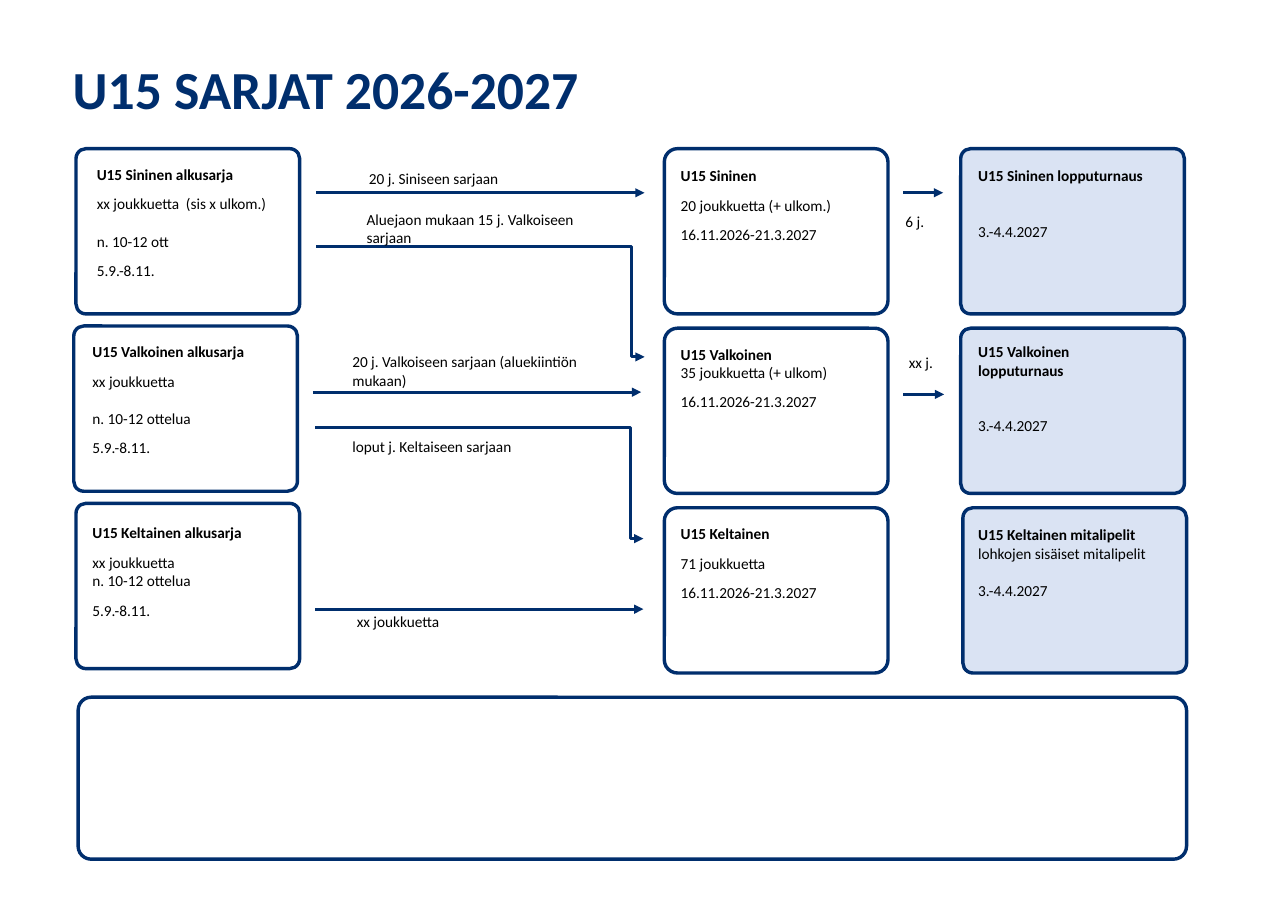
from lxml.etree import SubElement
from pptx import Presentation
from pptx.dml.color import RGBColor
from pptx.enum.shapes import MSO_CONNECTOR as Connector, MSO_SHAPE as Shape
from pptx.enum.text import MSO_ANCHOR as Anchor, MSO_AUTO_SIZE as AutoSize, PP_ALIGN as Align
from pptx.oxml.ns import qn
from pptx.util import Inches, Pt

COLORS = {"navy": "002E6D", "pale": "DAE3F3", "text": "000000"}
TITLE_FONT = {"name": "Calibri", "size": Pt(35), "bold": True}
HEADING_FONT = {"name": "Calibri", "size": Pt(10), "bold": True}
BODY_FONT = {"name": "Calibri", "size": Pt(10), "bold": False}
FRAME_FORMAT = {"word_wrap": True, "auto_size": AutoSize.NONE, "vertical_anchor": Anchor.TOP,
                "margin_left": Inches(0.1), "margin_right": Inches(0.1),
                "margin_top": Inches(0.05), "margin_bottom": Inches(0.05)}
SMALL_GAP, LINE_GAP, DOUBLE_GAP = 7.3, 12.2, 24.4


def write_text(shape, lines, fonts, color):
    frame = shape.text_frame
    for name, value in FRAME_FORMAT.items():
        setattr(frame, name, value)
    for index, (gap, text) in enumerate(lines):
        paragraph = frame.add_paragraph() if index else frame.paragraphs[0]
        paragraph.text = text
        paragraph.alignment = Align.LEFT
        paragraph.line_spacing = 1.0
        paragraph.space_before = Pt(gap)
        for name, value in fonts[min(index, len(fonts) - 1)].items():
            setattr(paragraph.font, name, value)
        paragraph.font.color.rgb = RGBColor.from_string(COLORS[color])


def add_box(left, top, width, height, radius, fill=None):
    shape = slide.shapes.add_shape(
        Shape.ROUNDED_RECTANGLE, Inches(left), Inches(top), Inches(width), Inches(height))
    shape.adjustments[0] = radius
    shape.shadow.inherit = False
    shape.line.color.rgb = RGBColor.from_string(COLORS["navy"])
    shape.line.width = Pt(2.25)
    if fill:
        shape.fill.solid()
        shape.fill.fore_color.rgb = RGBColor.from_string(COLORS[fill])
    else:
        shape.fill.background()


presentation = Presentation()
presentation.slide_width = Inches(11.69)
presentation.slide_height = Inches(8.27)
slide = presentation.slides.add_slide(presentation.slide_layouts[5])

title = slide.shapes.title
title_area = {"left": 0.56, "top": 0.46, "width": 9.64, "height": 0.69}
for name, value in title_area.items():
    setattr(title, name, Inches(value))
write_text(title, [(0, "U15 SARJAT 2026-2027")], [TITLE_FONT], "navy")

season_dates = (SMALL_GAP, "16.11.2026-21.3.2027")
opening_dates = (SMALL_GAP, "5.9.-8.11.")
final_dates = "3.-4.4.2027"

cards = [
    (0.69, 1.35, 0.78, 1.45, 1.14, [
        (0, "U15 Sininen alkusarja"), (SMALL_GAP, "xx joukkuetta  (sis x ulkom.)"),
        (LINE_GAP, "n. 10-12 ott"), opening_dates]),
    (0.67, 2.96, 0.74, 3.06, 1.14, [
        (0, "U15 Valkoinen alkusarja"), (SMALL_GAP, "xx joukkuetta"),
        (LINE_GAP, "n. 10-12 ottelua"), opening_dates]),
    (0.69, 4.57, 0.74, 4.7, 1.28, [
        (0, "U15 Keltainen alkusarja"), (SMALL_GAP, "xx joukkuetta"),
        (0, "n. 10-12 ottelua"), opening_dates]),
    (6.03, 1.35, 6.08, 1.46, 1.28, [
        (0, "U15 Sininen"), (SMALL_GAP, "20 joukkuetta (+ ulkom.)"), season_dates]),
    (6.03, 2.98, 6.08, 3.08, 0.88, [
        (0, "U15 Valkoinen"), (0, "35 joukkuetta (+ ulkom)"), season_dates]),
    (6.03, 4.61, 6.08, 4.71, 1.28, [
        (0, "U15 Keltainen"), (SMALL_GAP, "71 joukkuetta"), season_dates]),
    (8.72, 1.35, 8.78, 1.46, 0.94, [
        (0, "U15 Sininen lopputurnaus"), (DOUBLE_GAP, final_dates)]),
    (8.72, 2.98, 8.78, 3.06, 1.11, [
        (0, "U15 Valkoinen lopputurnaus"), (DOUBLE_GAP, final_dates)]),
    (8.74, 4.61, 8.78, 4.72, 1.11, [
        (0, "U15 Keltainen mitalipelit"), (0, "lohkojen sisäiset mitalipelit"),
        (LINE_GAP, final_dates)]),
]
column_styles = [(0.06, None), (0.08, None), (0.06, "pale")]
for index, (left, top, text_left, text_top, text_height, lines) in enumerate(cards):
    radius, fill = column_styles[index // 3]
    add_box(left, top, 2.03, 1.5, radius, fill)
    text_box = slide.shapes.add_textbox(
        Inches(text_left), Inches(text_top), Inches(1.75), Inches(text_height))
    write_text(text_box, lines, [HEADING_FONT, BODY_FONT], "text")

add_box(0.71, 6.33, 10.06, 1.47, 0.08)

arrows = [
    (2.87, 1.75, 5.85, 1.75),
    (2.87, 2.24, 5.85, 3.24),
    (2.84, 3.56, 5.82, 3.56),
    (2.86, 3.88, 5.84, 4.89),
    (2.86, 5.53, 5.84, 5.53),
    (8.2, 1.75, 8.56, 1.75),
    (8.2, 3.58, 8.57, 3.58),
]
for start_x, start_y, end_x, end_y in arrows:
    bent = start_y != end_y
    arrow = slide.shapes.add_connector(
        Connector.ELBOW if bent else Connector.STRAIGHT,
        Inches(start_x), Inches(start_y), Inches(end_x), Inches(end_y))
    arrow.line.color.rgb = RGBColor.from_string(COLORS["navy"])
    arrow.line.width = Pt(2)
    properties = arrow.element.spPr
    SubElement(properties.find(qn("a:ln")), qn("a:tailEnd"), type="triangle")
    SubElement(properties, qn("a:effectLst"))
    if bent:
        guides = properties.find(qn("a:prstGeom")).get_or_add_avLst()
        SubElement(guides, qn("a:gd"), name="adj1", fmla="val 96100")

labels = [
    (3.25, 1.49, 2.24, 0.57, "20 j. Siniseen sarjaan"),
    (3.23, 1.86, 2.24, 0.74, "Aluejaon mukaan 15 j. Valkoiseen sarjaan"),
    (3.1, 3.15, 2.24, 0.74, "20 j. Valkoiseen sarjaan (aluekiintiön mukaan)"),
    (3.1, 3.92, 1.85, 0.57, "loput j. Keltaiseen sarjaan"),
    (3.14, 5.51, 1.81, 0.57, "xx joukkuetta"),
    (8.12, 1.88, 0.57, 0.57, "6 j."),
    (8.15, 3.16, 0.57, 0.57, "xx j."),
]
for left, top, width, height, text in labels:
    label = slide.shapes.add_textbox(Inches(left), Inches(top), Inches(width), Inches(height))
    write_text(label, [(0, text)], [BODY_FONT], "text")

presentation.save("out.pptx")
